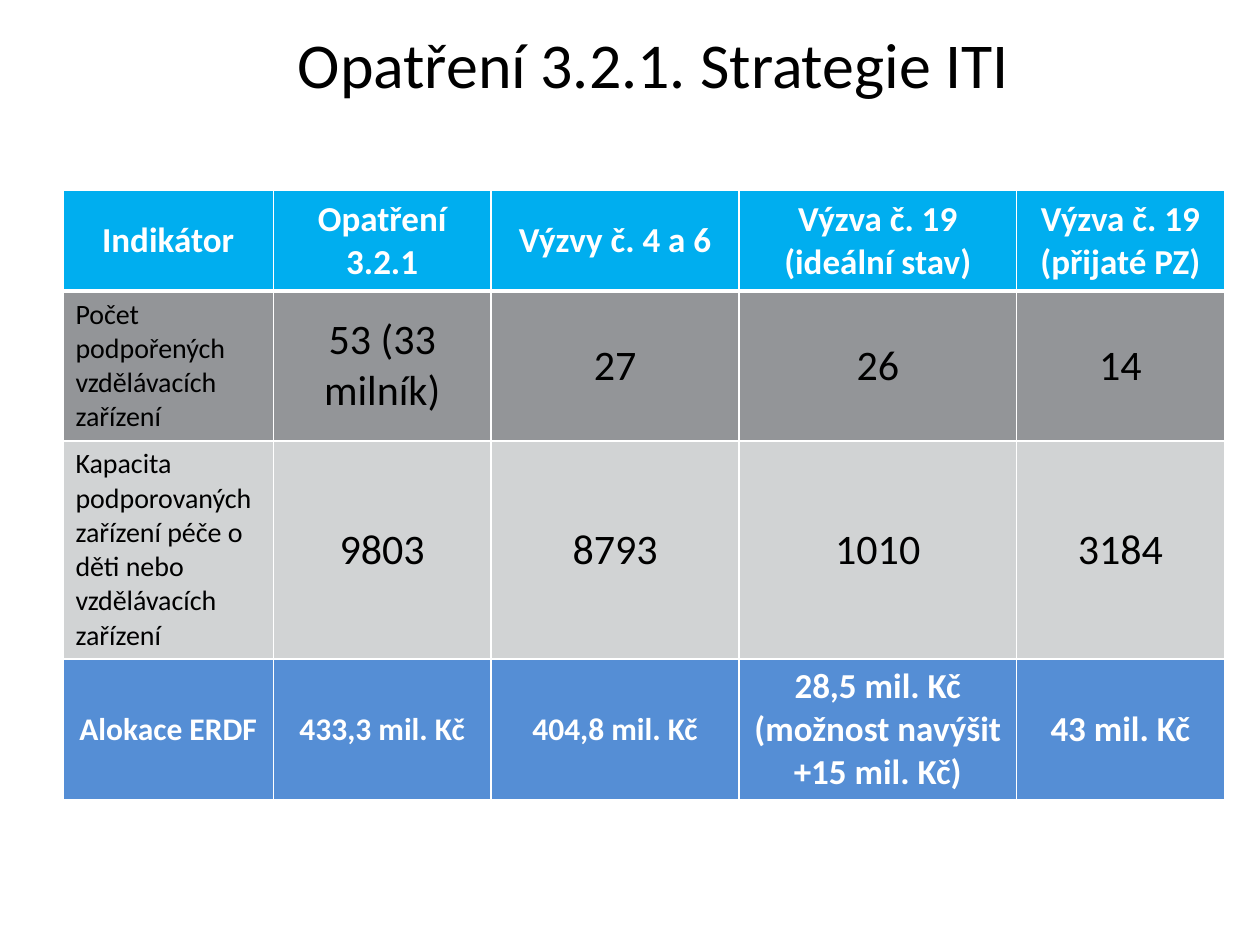
"""Build the slide comparing ITI strategy indicators across calls."""
from lxml import etree
from pptx import Presentation
from pptx.dml.color import RGBColor
from pptx.enum.text import MSO_ANCHOR, PP_ALIGN
from pptx.oxml.ns import qn
from pptx.util import Cm, Pt

CENTER, LEFT, MIDDLE = PP_ALIGN.CENTER, PP_ALIGN.LEFT, MSO_ANCHOR.MIDDLE
FONT = "Calibri"
COLORS = {
    "header": "00AEEF",
    "dark": "939598",
    "light": "D1D3D4",
    "total": "558ED5",
    "white": "FFFFFF",
    "black": "000000",
}
TITLE = "Opatření 3.2.1. Strategie ITI"
COLUMN_WIDTHS = [4.24, 4.39, 5, 5.59, 4.19]
ROWS = [
    {"height": 2.03, "fill": "header", "sizes": [20] * 5, "bold": True,
     "texts": ["Indikátor", "Opatření 3.2.1", "Výzvy č. 4 a 6",
               "Výzva č. 19\n(ideální stav)", "Výzva č. 19\n(přijaté PZ)"]},
    {"height": 3.02, "fill": "dark", "sizes": [16] + [24] * 4, "bold": False,
     "texts": ["Počet podpořených vzdělávacích zařízení",
               "53 (33 milník)", "27", "26", "14"]},
    {"height": 4.39, "fill": "light", "sizes": [16] + [24] * 4, "bold": False,
     "texts": ["Kapacita podporovaných zařízení péče o děti nebo vzdělávacích zařízení",
               "9803", "8793", "1010", "3184"]},
    {"height": 2.84, "fill": "total", "sizes": [18] * 3 + [20] * 2, "bold": True,
     "texts": ["Alokace ERDF", "433,3 mil. Kč", "404,8 mil. Kč",
               "28,5 mil. Kč (možnost navýšit +15 mil. Kč)", "43 mil. Kč"]},
]


def style_paragraph(para, size, color, bold=False, align=CENTER):
    para.alignment = align
    para.font.name = FONT
    para.font.size = Pt(size)
    para.font.bold = bold
    para.font.color.rgb = RGBColor.from_string(COLORS[color])


def add_borders(cell, widths):
    properties = cell._tc.get_or_add_tcPr()
    for side, width in widths.items():
        line = etree.SubElement(properties, qn(f"a:ln{side}"), w=str(Pt(width)))
        fill = etree.SubElement(line, qn("a:solidFill"))
        etree.SubElement(fill, qn("a:srgbClr"), val=COLORS["white"])


def add_title(slide):
    title = slide.shapes.title
    title.left, title.top, title.width, title.height = Cm(1.17), Cm(-0.33), Cm(24), Cm(3.18)
    title.text_frame.text = TITLE
    title.text_frame.vertical_anchor = MIDDLE
    style_paragraph(title.text_frame.paragraphs[0], 36.5, "black")


def fill_cell(cell, row, row_index, column_index):
    add_borders(cell, {"L": 1, "R": 1, "T": 3 if row_index == 1 else 1,
                       "B": 3 if row_index == 0 else 1})
    cell.fill.solid()
    cell.fill.fore_color.rgb = RGBColor.from_string(COLORS[row["fill"]])
    cell.vertical_anchor = MIDDLE
    if not row["bold"] and column_index > 1:
        cell.margin_left = cell.margin_right = cell.margin_top = cell.margin_bottom = 0
    cell.text_frame.text = row["texts"][column_index]
    align = LEFT if column_index == 0 and not row["bold"] else CENTER
    color = "white" if row["bold"] else "black"
    for para in cell.text_frame.paragraphs:
        style_paragraph(para, row["sizes"][column_index], color, row["bold"], align)


def add_indicator_table(slide):
    height = sum(row["height"] for row in ROWS)
    frame = slide.shapes.add_table(len(ROWS), len(COLUMN_WIDTHS), Cm(1.27), Cm(3.84),
                                   Cm(sum(COLUMN_WIDTHS)), Cm(height))
    table = frame.table
    for column, width in zip(table.columns, COLUMN_WIDTHS):
        column.width = Cm(width)
    for row_index, row in enumerate(ROWS):
        table.rows[row_index].height = Cm(row["height"])
        for column_index in range(len(COLUMN_WIDTHS)):
            fill_cell(table.cell(row_index, column_index), row, row_index, column_index)


def main():
    deck = Presentation()
    deck.slide_width, deck.slide_height = Cm(25.4), Cm(19.05)
    page = deck.slides.add_slide(deck.slide_layouts[5])
    add_title(page)
    add_indicator_table(page)
    deck.save("out.pptx")


if __name__ == "__main__":
    main()
